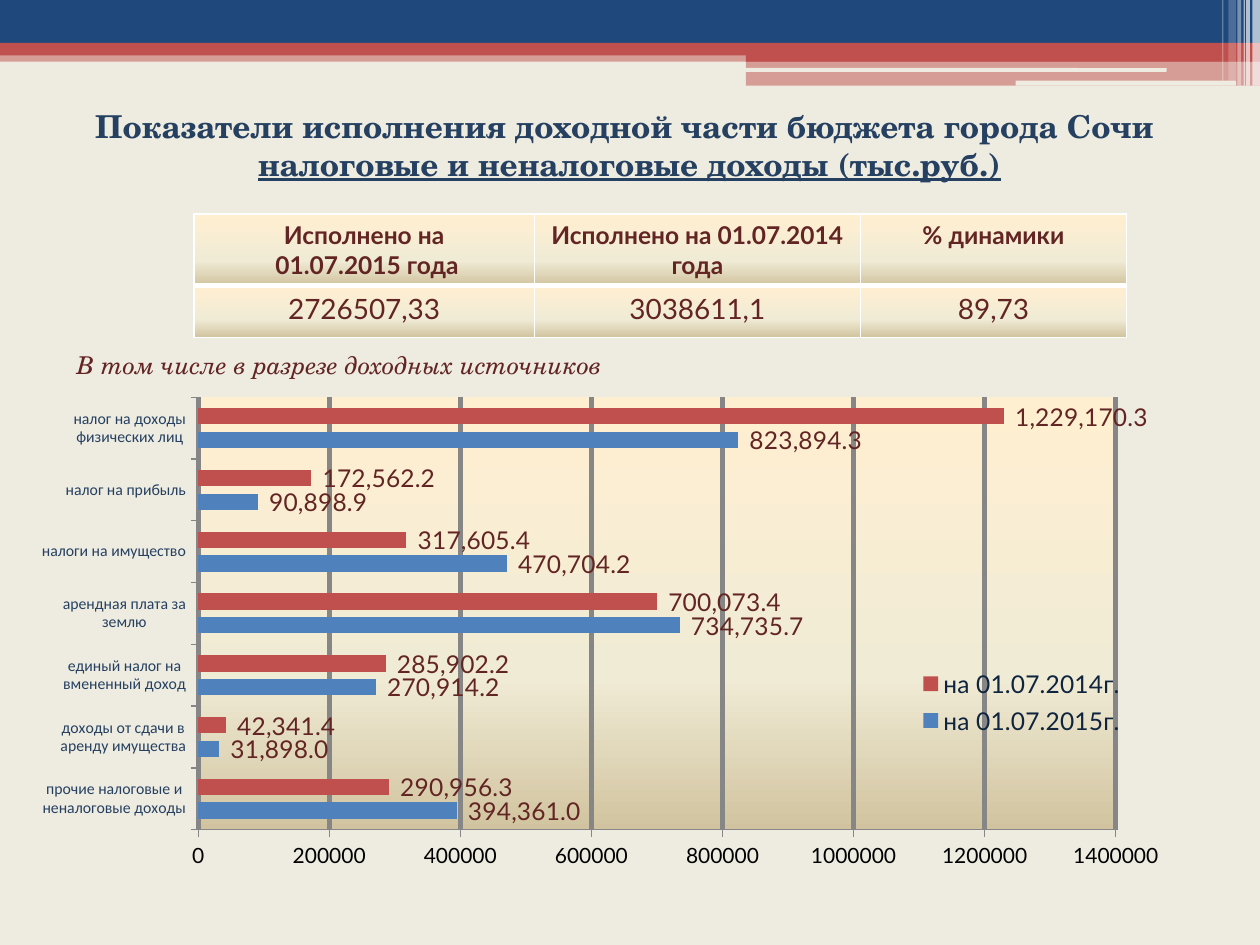
from lxml.etree import SubElement
from pptx import Presentation
from pptx.chart.data import CategoryChartData
from pptx.dml.color import RGBColor
from pptx.enum.chart import XL_CHART_TYPE as ChartType, XL_LABEL_POSITION as LabelPos
from pptx.enum.chart import XL_LEGEND_POSITION as LegendPos, XL_TICK_MARK as Tick
from pptx.enum.shapes import MSO_SHAPE as Shape
from pptx.enum.text import MSO_AUTO_SIZE as AutoSize, PP_ALIGN as Align
from pptx.oxml import parse_xml
from pptx.oxml.ns import nsdecls, qn
from pptx.util import Inches, Pt

WIDTH, HEIGHT = Inches(10), Inches(7.5)
COLUMNS, ROWS = 100, 75
COLORS = {
    "paper": "EEECE1", "navy": "1F497D", "red": "C0504D", "blue": "4F81BD",
    "white": "FFFFFF", "title": "254061", "wine": "632523", "legend": "0F243E",
    "black": "000000", "grid": "868686",
}
SAND = [(0, "FFEFD1"), (65, "F0EBD5"), (100, "D1C39F")]
SERIF, SANS, AXIS_SANS = "TeX Gyre Schola", "Lato", "Calibri"
NUMBER_FORMAT = r"_-* #,##0.0_р_._-;\-* #,##0.0_р_._-;_-* \-??_р_._-;_-@_-"

FORMATS = {
    "title": {"name": SERIF, "size": Pt(18), "bold": True, "color": "title"},
    "subtitle": {"name": SERIF, "size": Pt(18), "bold": True, "underline": True, "color": "title"},
    "note": {"name": SERIF, "size": Pt(14), "italic": True, "color": "wine"},
    "header": {"name": SANS, "size": Pt(14), "bold": True, "color": "wine"},
    "total": {"name": SANS, "size": Pt(16), "bold": False, "color": "wine"},
    "chart": {"name": SERIF, "size": Pt(18), "color": "black"},
    "categories": {"name": AXIS_SANS, "size": Pt(9), "color": "title"},
    "values": {"name": SANS, "size": Pt(12), "color": "black"},
    "labels": {"name": SANS, "size": Pt(14), "color": "wine"},
    "legend": {"name": SANS, "size": Pt(14), "color": "legend"},
}

BANDS = [
    ((0, 4, 100, 0.9), "red", 50),
    ((0, 0, 100, 3.4), "navy", 100),
    ((0, 3.4, 100, 1), "red", 100),
    ((59.2, 3.9, 40.8, 1), "red", 100),
    ((59.2, 4.8, 40.8, 2), "red", 50),
]
SLITS = [(59.1, 5.4, 33.5, 0.3), (80.6, 6.4, 17.5, 0.4)]
STRIPES = [
    (99.4, 0.6, 6.8, 65), (98.9, 0.3, 6.8, 65), (98.7, 0.1, 6.8, 60),
    (98.2, 0.3, 6.8, 40), (97.5, 0.6, 6.4, 20), (97, 0.1, 6.4, 30),
]

TOTALS = [
    ("header", ["Исполнено на\n 01.07.2015 года", "Исполнено на 01.07.2014 года", "% динамики"]),
    ("total", ["2726507,33", "3038611,1", "89,73"]),
]
INCOME = [
    ("прочие налоговые и неналоговые доходы", 394361, 290956.3),
    ("доходы от сдачи в аренду имущества", 31898, 42341.4),
    ("единый налог на вмененный доход", 270914.2, 285902.2),
    ("арендная плата за землю", 734735.7, 700073.4),
    ("налоги на имущество", 470704.2, 317605.4),
    ("налог на прибыль", 90898.9, 172562.2),
    ("налог на доходы физических лиц", 823894.3, 1229170.3),
]
PERIODS = [("на 01.07.2015г.", "blue"), ("на 01.07.2014г.", "red")]


def rgb(color):
    """Return the named colour."""
    return RGBColor.from_string(COLORS[color])


def across(columns):
    """Return the length of a number of grid columns."""
    return round(WIDTH * columns / COLUMNS)


def down(rows):
    """Return the length of a number of grid rows."""
    return round(HEIGHT * rows / ROWS)


def place(left, top, width, height):
    """Return a grid box as slide lengths."""
    return across(left), down(top), across(width), down(height)


def style(font, role):
    """Apply the format of a text role to a font."""
    for attribute, value in FORMATS[role].items():
        if attribute == "color":
            font.color.rgb = rgb(value)
        else:
            setattr(font, attribute, value)


def sand_gradient():
    """Return a vertical sand gradient fill."""
    stops = "".join(
        f'<a:gs pos="{share * 1000}"><a:srgbClr val="{color}"/></a:gs>' for share, color in SAND
    )
    return parse_xml(
        f'<a:gradFill {nsdecls("a")} rotWithShape="1"><a:gsLst>{stops}</a:gsLst>'
        '<a:lin ang="5400000" scaled="0"/></a:gradFill>'
    )


def add_band(slide, box, color, opacity=100, kind=Shape.RECTANGLE):
    """Draw one flat piece of the header ornament."""
    band = slide.shapes.add_shape(kind, *place(*box))
    band.shadow.inherit = False
    band.line.fill.background()
    band.fill.solid()
    band.fill.fore_color.rgb = rgb(color)
    if opacity < 100:
        tint = band.fill._xPr.find(qn("a:solidFill"))[0]
        SubElement(tint, qn("a:alpha"), val=str(opacity * 1000))


def add_ornament(slide):
    """Draw the layered header ornament."""
    for box, color, opacity in BANDS:
        add_band(slide, box, color, opacity)
    for box in SLITS:
        add_band(slide, box, "paper", kind=Shape.ROUNDED_RECTANGLE)
    for left, width, height, opacity in STRIPES:
        add_band(slide, (left, 0, width, height), "white", opacity)


def write(frame, lines, align):
    """Write pairs of text and role as paragraphs."""
    for index, (text, role) in enumerate(lines):
        paragraph = frame.add_paragraph() if index else frame.paragraphs[0]
        paragraph.alignment = align
        run = paragraph.add_run()
        run.text = text
        style(run.font, role)


def add_text(slide, box, lines, align):
    """Add a wrapping text box."""
    frame = slide.shapes.add_textbox(*place(*box)).text_frame
    frame.word_wrap = True
    frame.auto_size = AutoSize.SHAPE_TO_FIT_TEXT
    write(frame, lines, align)


def dress_cell(cell, bottom):
    """Give a cell white borders and the sand gradient."""
    properties = cell._tc.get_or_add_tcPr()
    for side, points in zip("LRTB", (1, 1, 1, bottom)):
        border = SubElement(properties, qn(f"a:ln{side}"), w=str(Pt(points)))
        paint = SubElement(border, qn("a:solidFill"))
        SubElement(paint, qn("a:srgbClr"), val=COLORS["white"])
    properties.append(sand_gradient())


def add_totals(slide):
    """Add the table of totals."""
    table = slide.shapes.add_table(2, 3, *place(15.4, 17, 74, 9.7)).table
    table.horz_banding = False
    for column, width in zip(table.columns, (27, 25.9, 21.1)):
        column.width = across(width)
    for row, height in zip(table.rows, (5.6, 4.1)):
        row.height = down(height)
    for row, (role, texts), bottom in zip(table.rows, TOTALS, (3, 1)):
        for cell, text in zip(row.cells, texts):
            write(cell.text_frame, [(line, role) for line in text.split("\n")], Align.CENTER)
            dress_cell(cell, bottom)


def layout(x, y, w, h, inner=False):
    """Return a manual chart layout in shares of the chart."""
    target = '<c:layoutTarget val="inner"/>' if inner else ""
    modes = "".join(f'<c:{side}Mode val="edge"/>' for side in "xy")
    sizes = "".join(f'<c:{key} val="{value}"/>' for key, value in zip("xywh", (x, y, w, h)))
    return parse_xml(
        f'<c:layout {nsdecls("c")}><c:manualLayout>{target}{modes}{sizes}</c:manualLayout></c:layout>'
    )


def format_axes(chart):
    """Format both axes and the gridlines."""
    for axis, role in ((chart.category_axis, "categories"), (chart.value_axis, "values")):
        style(axis.tick_labels.font, role)
        axis.major_tick_mark = Tick.OUTSIDE
        axis.minor_tick_mark = Tick.NONE
        axis.format.line.color.rgb = rgb("grid")
    scale = chart.value_axis
    for attribute, value in {"minimum_scale": 0, "maximum_scale": 1400000, "major_unit": 200000}.items():
        setattr(scale, attribute, value)
    scale.tick_labels.number_format = "General"
    scale.tick_labels.number_format_is_linked = False
    scale.major_gridlines.format.line.color.rgb = rgb("grid")
    scale.major_gridlines.format.line.width = Pt(3)


def format_series(plot):
    """Colour the bars and label their values."""
    plot.gap_width, plot.overlap, plot.vary_by_categories = 134, -45, False
    for series, (_, color) in zip(plot.series, PERIODS):
        series.format.fill.solid()
        series.format.fill.fore_color.rgb = rgb(color)
        series.invert_if_negative = False
        labels = series.data_labels
        style(labels.font, "labels")
        values = {"show_value": True, "position": LabelPos.OUTSIDE_END,
                  "number_format": NUMBER_FORMAT, "number_format_is_linked": False}
        for attribute, value in values.items():
            setattr(labels, attribute, value)


def format_legend(chart):
    """Set the legend over the lower right of the plot."""
    chart.has_legend = True
    legend = chart.legend
    legend.position, legend.include_in_layout = LegendPos.RIGHT, False
    style(legend.font, "legend")
    legend._element.find(qn("c:legendPos")).addnext(layout(0.72, 0.51, 0.19, 0.14))


def add_income(slide):
    """Add the bar chart of income by source."""
    categories, *columns = zip(*INCOME)
    data = CategoryChartData(number_format="General")
    data.categories = categories
    for (period, _), values in zip(PERIODS, columns):
        data.add_series(period, values)
    chart = slide.shapes.add_chart(ChartType.BAR_CLUSTERED, *place(3.1, 29.4, 95.7, 45.4), data).chart
    chart.has_title = False
    style(chart.font, "chart")
    format_axes(chart)
    format_series(chart.plots[0])
    format_legend(chart)
    area = chart._chartSpace.chart.plotArea
    for old in area.findall(qn("c:layout")):
        area.remove(old)
    area.insert(0, layout(0.132, 0.047, 0.761, 0.756, inner=True))
    SubElement(area, qn("c:spPr")).append(sand_gradient())


def main():
    """Build and save the slide."""
    deck = Presentation()
    deck.slide_width, deck.slide_height = WIDTH, HEIGHT
    slide = deck.slides.add_slide(deck.slide_layouts[6])
    slide.background.fill.solid()
    slide.background.fill.fore_color.rgb = rgb("paper")
    add_ornament(slide)
    add_income(slide)
    add_text(slide, (3.1, 8, 93.7, 7.1), [
        ("Показатели исполнения доходной части бюджета города Сочи ", "title"),
        ("налоговые и неналоговые доходы (тыс.руб.)", "subtitle"),
    ], Align.CENTER)
    add_totals(slide)
    add_text(slide, (5.1, 27.3, 47.2, 3.4),
             [("В том числе в разрезе доходных источников", "note")], Align.LEFT)
    deck.save("out.pptx")


if __name__ == "__main__":
    main()
